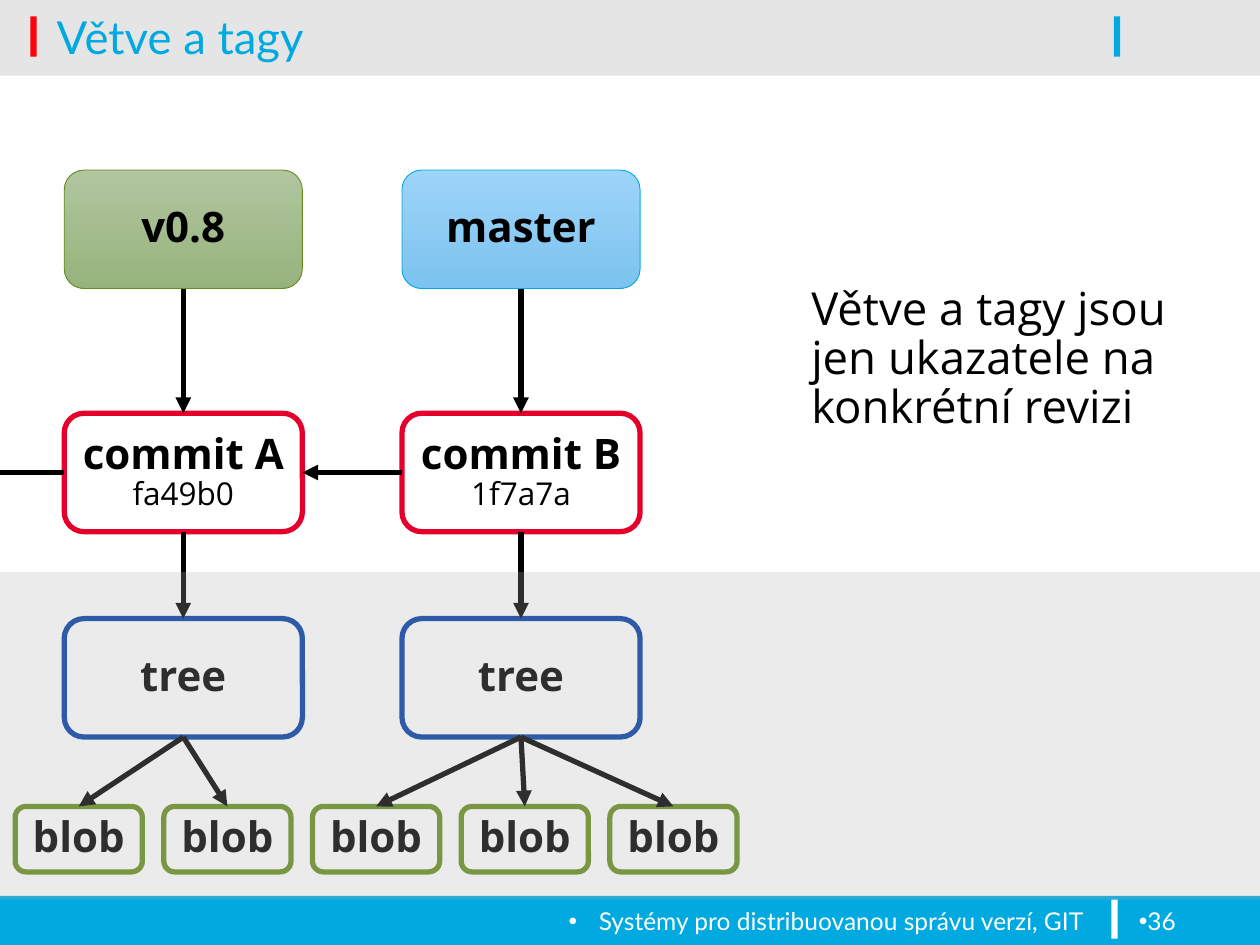
from lxml import etree
from pptx import Presentation
from pptx.dml.color import RGBColor
from pptx.enum import shapes, text
from pptx.oxml import ns
from pptx.util import Inches, Pt

BLACK = RGBColor(0, 0, 0)
WHITE = RGBColor(0xFF, 0xFF, 0xFF)
CYAN = RGBColor(0x00, 0xA9, 0xE0)
ACCENT_RED = RGBColor(0xFE, 0x00, 0x0C)
COMMIT_RED = RGBColor(0xE4, 0x00, 0x2B)
TREE_BLUE = RGBColor(0x00, 0x3D, 0xA5)
BLOB_GREEN = RGBColor(0x65, 0x8D, 0x1B)
VEIL_GREY = RGBColor(0xB4, 0xB4, 0xB4)
TAG_FILL = (RGBColor(0xB1, 0xC5, 0x9E), RGBColor(0x97, 0xB3, 0x7D))
BRANCH_FILL = (RGBColor(0x9D, 0xD4, 0xF9), RGBColor(0x7C, 0xC3, 0xEF))

TOP, LEFT, BOTTOM, RIGHT = range(4)


def sub(parent, tag, **attributes):
    return etree.SubElement(parent, ns.qn(tag), attributes)


def style(font, name, size, color, bold=False):
    font.name, font.size, font.bold = name, Pt(size), bold
    font.color.rgb = color


def add_bar(slide, x, y, w, h, color, opacity=100):
    bar = slide.shapes.add_shape(shapes.MSO_SHAPE.RECTANGLE,
                                 Inches(x), Inches(y), Inches(w), Inches(h))
    bar.shadow.inherit = False
    bar.fill.solid()
    bar.fill.fore_color.rgb = color
    bar.line.fill.background()
    if opacity < 100:
        rgb = bar._element.spPr.find(".//" + ns.qn("a:srgbClr"))
        sub(rgb, "a:alpha", val=str(opacity * 1000))


def add_node(slide, x, y, w, h, label, outline, gradient=None, revision=None):
    node = slide.shapes.add_shape(shapes.MSO_SHAPE.ROUNDED_RECTANGLE,
                                  Inches(x), Inches(y), Inches(w), Inches(h))
    node.shadow.inherit = False
    node.line.color.rgb = outline
    node.line.width = Pt(0.5 if gradient else 3)
    if gradient:
        node.fill.gradient()
        node.fill.gradient_angle = 270
        for stop, color in zip(node.fill.gradient_stops, gradient):
            stop.color.rgb = color
    else:
        node.fill.solid()
        node.fill.fore_color.rgb = WHITE
    frame = node.text_frame
    frame.text = label
    frame.vertical_anchor = text.MSO_ANCHOR.MIDDLE
    paragraph = frame.paragraphs[0]
    paragraph.alignment = text.PP_ALIGN.CENTER
    paragraph.line_spacing = 0.9
    style(paragraph.runs[0].font, "Open Sans", 24, BLACK, bold=True)
    if revision:
        run = paragraph.add_run()
        run.text = " " + revision
        style(run.font, "Open Sans", 18, BLACK)
    return node


def add_arrow(slide, source, source_side, target=None, target_side=TOP, end=(0, 0)):
    """Arrow from a node to another node, or to a free end point."""
    arrow = slide.shapes.add_connector(shapes.MSO_CONNECTOR.STRAIGHT, 0, 0,
                                       Inches(end[0]), Inches(end[1]))
    arrow.begin_connect(source, source_side)
    if target is not None:
        arrow.end_connect(target, target_side)
    arrow.line.color.rgb = BLACK
    arrow.line.width = Pt(3)
    sub(arrow.line._get_or_add_ln(), "a:tailEnd", type="triangle")
    sub(arrow._element.spPr, "a:effectLst")


def add_header(slide, x, y, w, h):
    add_bar(slide, x, y + h - 0.04, w, 0.04, BLACK, opacity=10)
    add_bar(slide, x, y, w, h - 0.04, BLACK, opacity=10)
    add_bar(slide, x + 0.24, y + 0.13, 0.05, 0.32, ACCENT_RED)
    add_bar(slide, x + 8.84, y + 0.13, 0.05, 0.32, CYAN)

    title = slide.shapes.title
    slide.shapes._spTree.append(title._element)  # above the bands
    title.left, title.top = Inches(x + 0.35), Inches(y - 0.11)
    title.width, title.height = Inches(8.42), Inches(0.79)
    frame = title.text_frame
    frame.text = "Větve a tagy"
    frame.vertical_anchor = text.MSO_ANCHOR.MIDDLE
    frame.paragraphs[0].alignment = text.PP_ALIGN.LEFT
    style(frame.paragraphs[0].runs[0].font, "Lato", 26, CYAN)


def add_footer_text(slide, x, y, w, words, alignment, hanging):
    box = slide.shapes.add_textbox(Inches(x), Inches(y), Inches(w), Inches(0.36))
    frame = box.text_frame
    frame.word_wrap = True
    frame.text = words
    paragraph = frame.paragraphs[0]
    paragraph.alignment = alignment
    properties = paragraph._p.get_or_add_pPr()
    properties.set("marL", str(Inches(hanging)))
    properties.set("indent", str(-Inches(hanging)))
    sub(properties, "a:buFont", typeface="Arial")
    sub(properties, "a:buChar", char="•")
    style(paragraph.runs[0].font, "Lato", 14, WHITE)


def add_footer(slide, x, y, w, h):
    add_bar(slide, x, y, w, h, CYAN)
    add_bar(slide, x + 8.82, y + 0.03, 0.05, 0.31, WHITE)
    add_footer_text(slide, x + 0.12, y + 0.03, 8.58,
                    "Systémy pro distribuovanou správu verzí, GIT",
                    text.PP_ALIGN.RIGHT, 0.24)
    add_footer_text(slide, x + 8.94, y + 0.03, 0.9, "36", text.PP_ALIGN.LEFT, 0)


def add_explanation(slide, x, y, w, h):
    box = slide.shapes.add_textbox(Inches(x), Inches(y), Inches(w), Inches(h))
    frame = box.text_frame
    frame.word_wrap = False
    frame.text = "Větve a tagy jsou \vjen ukazatele na \vkonkrétní revizi"
    paragraph = frame.paragraphs[0]
    paragraph.line_spacing = 0.9
    for run in paragraph.runs:
        style(run.font, "Open Sans", 26, BLACK)


def add_graph(slide, x, y):
    """Two columns of pointer, commit and tree above a row of blobs."""
    node_w, node_h, column_step = 1.89, 0.94, 2.68
    columns = (
        ("v0.8", BLOB_GREEN, TAG_FILL, "commit A", "fa49b0", (0, 1)),
        ("master", CYAN, BRANCH_FILL, "commit B", "1f7a7a", (2, 3, 4)),
    )
    blobs = [add_node(slide, x + 1.18 * i, y + 5.05, 1.01, 0.52, "blob", BLOB_GREEN)
             for i in range(5)]
    commits = []
    for i, (name, outline, gradient, commit_name, revision, children) in enumerate(columns):
        left = x + 0.39 + column_step * i
        pointer = add_node(slide, left, y, node_w, node_h, name, outline, gradient)
        commit = add_node(slide, left, y + 1.93, node_w, node_h, commit_name,
                          COMMIT_RED, revision=revision)
        tree = add_node(slide, left, y + 3.56, node_w, node_h, "tree", TREE_BLUE)
        add_arrow(slide, pointer, BOTTOM, commit)
        add_arrow(slide, commit, BOTTOM, tree)
        for child in children:
            add_arrow(slide, tree, BOTTOM, blobs[child])
        commits.append(commit)

    # History runs from right to left and on past the slide edge
    add_arrow(slide, commits[1], LEFT, commits[0], RIGHT)
    add_arrow(slide, commits[0], LEFT, end=(x - 0.4, y + 2.4))


def main():
    deck = Presentation()
    deck.slide_width, deck.slide_height = Inches(10), Inches(7.5)
    slide = deck.slides.add_slide(deck.slide_layouts[5])
    add_footer(slide, 0, 7.11, 10, 0.39)
    add_header(slide, 0, 0, 10, 0.6)
    add_explanation(slide, 6.34, 2.22, 3.15, 1.41)
    add_graph(slide, 0.12, 1.35)
    # Veil that fades the trees and blobs
    add_bar(slide, 0, 4.54, 10, 2.6, VEIL_GREY, opacity=26)
    deck.save("out.pptx")


if __name__ == "__main__":
    main()
